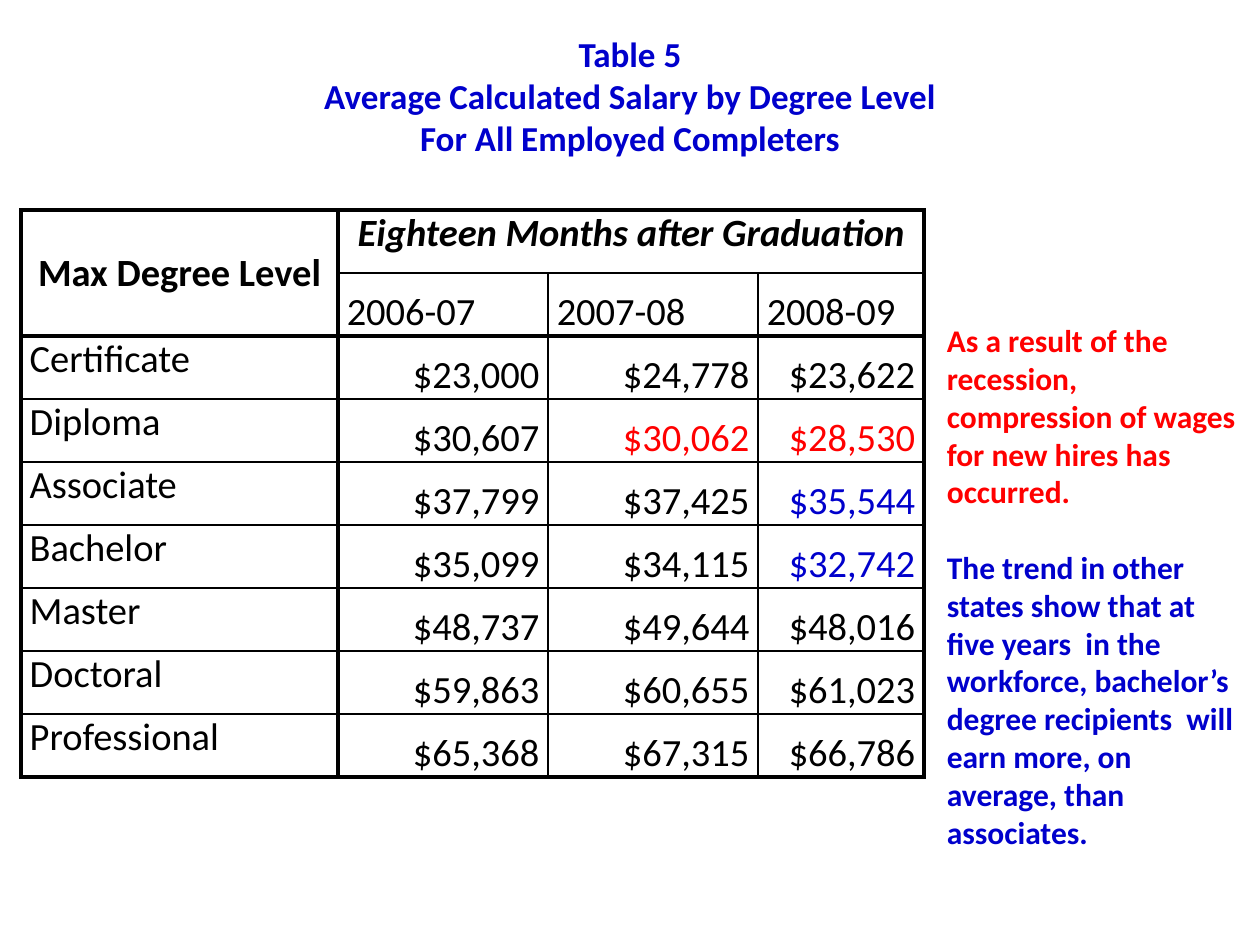
from lxml.etree import SubElement
from pptx import Presentation
from pptx.dml.color import RGBColor
from pptx.enum.text import MSO_ANCHOR as Anchor, MSO_AUTO_SIZE as Fit, PP_ALIGN as Align
from pptx.oxml.ns import qn
from pptx.util import Pt

BLACK, RED, BLUE = "000000", "FF0000", "0000CC"


def style(par, size, color, bold=False, italic=False):
    for run in par.runs:
        font = run.font
        font.name, font.size = "Calibri", Pt(size)
        font.bold, font.italic = bold, italic
        font.color.rgb = RGBColor.from_string(color)


def border(cell, side, width):
    line = SubElement(cell._tc.get_or_add_tcPr(), qn("a:ln" + side), w=str(Pt(width)))
    fill = SubElement(line, qn("a:solidFill"))
    SubElement(fill, qn("a:srgbClr"), val=BLACK)


prs = Presentation()
prs.slide_width, prs.slide_height = Pt(720), Pt(540)
slide = prs.slides.add_slide(prs.slide_layouts[5])

# Title
title = slide.shapes.title
title.left, title.top, title.width, title.height = Pt(36), Pt(21.6), Pt(648), Pt(90)
frame = title.text_frame
frame.text = "Table 5\nAverage Calculated Salary by Degree Level\nFor All Employed Completers"
frame.auto_size = Fit.NONE
frame.vertical_anchor = Anchor.MIDDLE
frame.margin_bottom = Pt(27.6)
for par in frame.paragraphs:
    par.alignment = Align.CENTER
    style(par, 20, BLUE, bold=True)

# Salary table
rows = [
    ("Max Degree Level", "Eighteen Months after Graduation", "", ""),
    ("", "2006-07", "2007-08", "2008-09"),
    ("Certificate", "$23,000", "$24,778", "$23,622"),
    ("Diploma", "$30,607", "$30,062", "$28,530"),
    ("Associate", "$37,799", "$37,425", "$35,544"),
    ("Bachelor", "$35,099", "$34,115", "$32,742"),
    ("Master", "$48,737", "$49,644", "$48,016"),
    ("Doctoral", "$59,863", "$60,655", "$61,023"),
    ("Professional", "$65,368", "$67,315", "$66,786"),
]
colors = {(3, 2): RED, (3, 3): RED, (4, 3): BLUE, (5, 3): BLUE}
widths = [181.2, 120, 120, 94.8]
thick_rows, thick_cols = (0, 2, 9), (0, 1, 4)

table = slide.shapes.add_table(
    len(rows), len(widths), Pt(12), Pt(120), Pt(sum(widths)), Pt(36 * len(rows))
).table
table.first_row = table.horz_banding = False
# "No Style, No Grid"
table._tbl.tblPr[0].text = "{2D5ABB26-0587-4C30-8999-92F81FD0307C}"
for col, width in zip(table.columns, widths):
    col.width = Pt(width)
for row in table.rows:
    row.height = Pt(36)
table.cell(0, 0).merge(table.cell(1, 0))
table.cell(0, 1).merge(table.cell(0, 3))

for r, texts in enumerate(rows):
    for c, text in enumerate(texts):
        cell = table.cell(r, c)
        if cell.is_spanned:
            continue
        right = c + (cell.span_width if cell.is_merge_origin else 1)
        low = r + (cell.span_height if cell.is_merge_origin else 1)
        edges = [("L", c, thick_cols), ("R", right, thick_cols),
                 ("T", r, thick_rows), ("B", low, thick_rows)]
        for side, edge, thick in edges:
            border(cell, side, 2.25 if edge in thick else 1)
        cell.fill.background()
        cell.margin_left = cell.margin_right = Pt(5)
        cell.margin_top = cell.margin_bottom = 0
        if r == 0:
            cell.vertical_anchor = Anchor.MIDDLE if c == 0 else Anchor.TOP
        else:
            cell.vertical_anchor = Anchor.TOP if c == 0 else Anchor.BOTTOM
        cell.text_frame.text = text
        par = cell.text_frame.paragraphs[0]
        if r == 0:
            par.alignment = Align.CENTER
        elif r > 1 and c > 0:
            par.alignment = Align.RIGHT
        style(par, 22, colors.get((r, c), BLACK), bold=r == 0, italic=r == 0 and c == 1)

# Side note
note = slide.shapes.add_textbox(Pt(534), Pt(180), Pt(186), Pt(312.5)).text_frame
note.word_wrap = True
note.text = (
    "As a result of the recession, compression of wages  for new hires has occurred.\n"
    "The trend in other states show that at five years  in the workforce, "
    "bachelor’s degree recipients  will earn more, on average, than associates."
)
for par, color in zip(note.paragraphs, (RED, BLUE)):
    style(par, 18, color, bold=True)
note.paragraphs[1].space_before = Pt(21.6)

prs.save("out.pptx")
